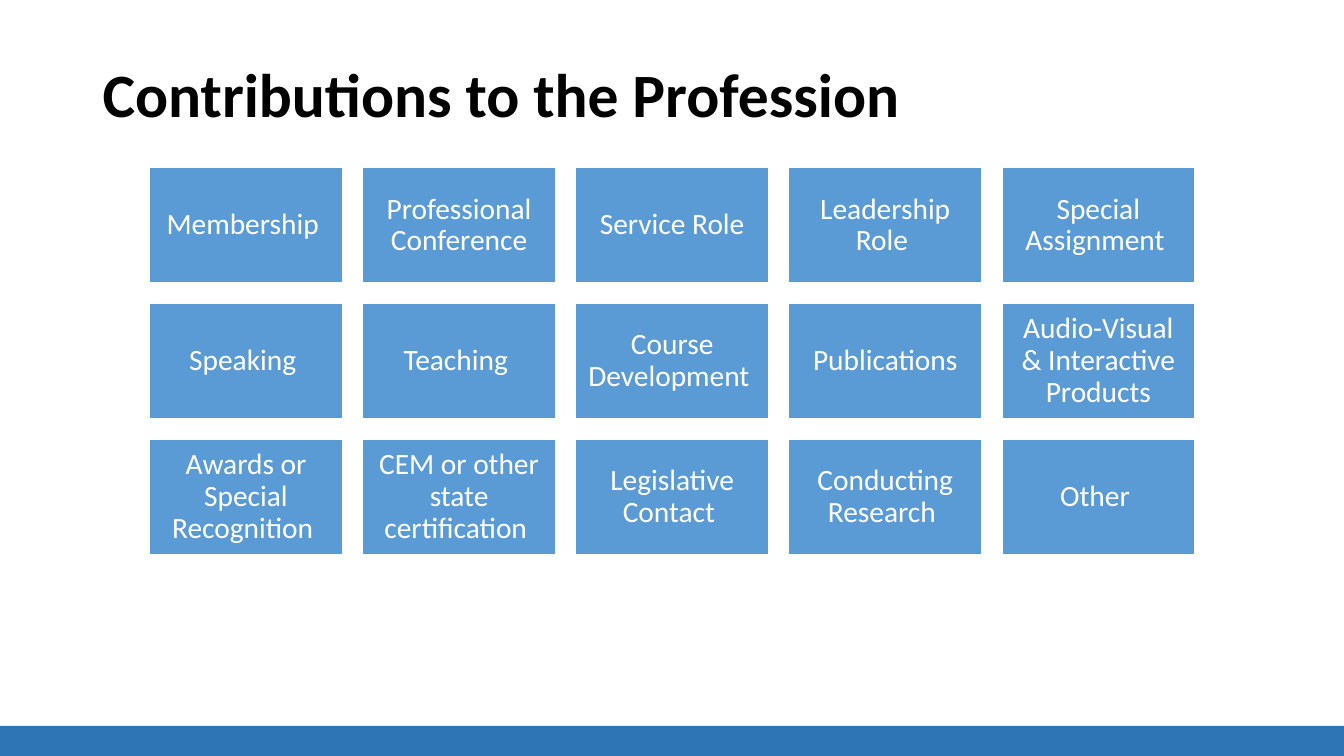
import pptx
import pptx.dml.color
import pptx.enum.shapes
import pptx.enum.text
import pptx.util

Cm = pptx.util.Cm
Pt = pptx.util.Pt
RGBColor = pptx.dml.color.RGBColor
Align = pptx.enum.text.PP_ALIGN

BLACK = RGBColor(0x00, 0x00, 0x00)
WHITE = RGBColor(0xFF, 0xFF, 0xFF)
BLUE = RGBColor(0x5B, 0x9B, 0xD5)
NAVY = RGBColor(0x2E, 0x75, 0xB6)

FONT = "Calibri"
WIDTH, HEIGHT = 33.87, 19.05
BAR_TOP = 18.29
LEFT, TOP = 3.76, 4.22
TILE_W, TILE_H = 4.88, 2.92
STEP_X, STEP_Y = 5.37, 3.42
INSET = 0.23

# Trailing spaces count in the centring of a line.
TILES = [
    ["Membership ", "Professional Conference", "Service Role",
     "Leadership Role ", "Special Assignment "],
    ["Speaking ", "Teaching ", "Course Development ",
     "Publications", "Audio-Visual & Interactive Products"],
    ["Awards or Special Recognition ", "CEM or other state certification ",
     "Legislative Contact ", "Conducting Research ", "Other "],
]


def set_text(frame, text, size, color, align, bold=False):
    frame.word_wrap = True
    frame.auto_size = pptx.enum.text.MSO_AUTO_SIZE.NONE
    frame.vertical_anchor = pptx.enum.text.MSO_ANCHOR.MIDDLE
    para = frame.paragraphs[0]
    para.alignment = align
    para.line_spacing = 0.9
    run = para.add_run()
    run.text = text
    run.font.name = FONT
    run.font.size = Pt(size)
    run.font.bold = bold
    run.font.color.rgb = color


def add_title(slide, text):
    title = slide.shapes.title
    title.left, title.top = Cm(2.33), Cm(0.63)
    title.width, title.height = Cm(29.21), Cm(3.68)
    set_text(title.text_frame, text, 44, BLACK, Align.LEFT, bold=True)


def add_rect(slide, left, top, width, height, fill):
    rect = slide.shapes.add_shape(
        pptx.enum.shapes.MSO_SHAPE.RECTANGLE,
        Cm(left), Cm(top), Cm(width), Cm(height))
    rect.shadow.inherit = False
    rect.fill.solid()
    rect.fill.fore_color.rgb = fill
    rect.line.fill.background()
    return rect


def add_tile(slide, left, top, text):
    tile = add_rect(slide, left, top, TILE_W, TILE_H, BLUE)
    tile.line.color.rgb = WHITE
    tile.line.width = Pt(1.5)
    frame = tile.text_frame
    frame.margin_left = frame.margin_right = Cm(INSET)
    frame.margin_top = frame.margin_bottom = Cm(INSET)
    set_text(frame, text, 21, WHITE, Align.CENTER)


def main():
    deck = pptx.Presentation()
    deck.slide_width, deck.slide_height = Cm(WIDTH), Cm(HEIGHT)
    slide = deck.slides.add_slide(deck.slide_layouts.get_by_name("Title Only"))
    add_rect(slide, 0, BAR_TOP, WIDTH, HEIGHT - BAR_TOP, NAVY)
    add_title(slide, "Contributions to the Profession")
    for row, names in enumerate(TILES):
        for col, name in enumerate(names):
            add_tile(slide, LEFT + col * STEP_X, TOP + row * STEP_Y, name)
    deck.save("out.pptx")


if __name__ == "__main__":
    main()
